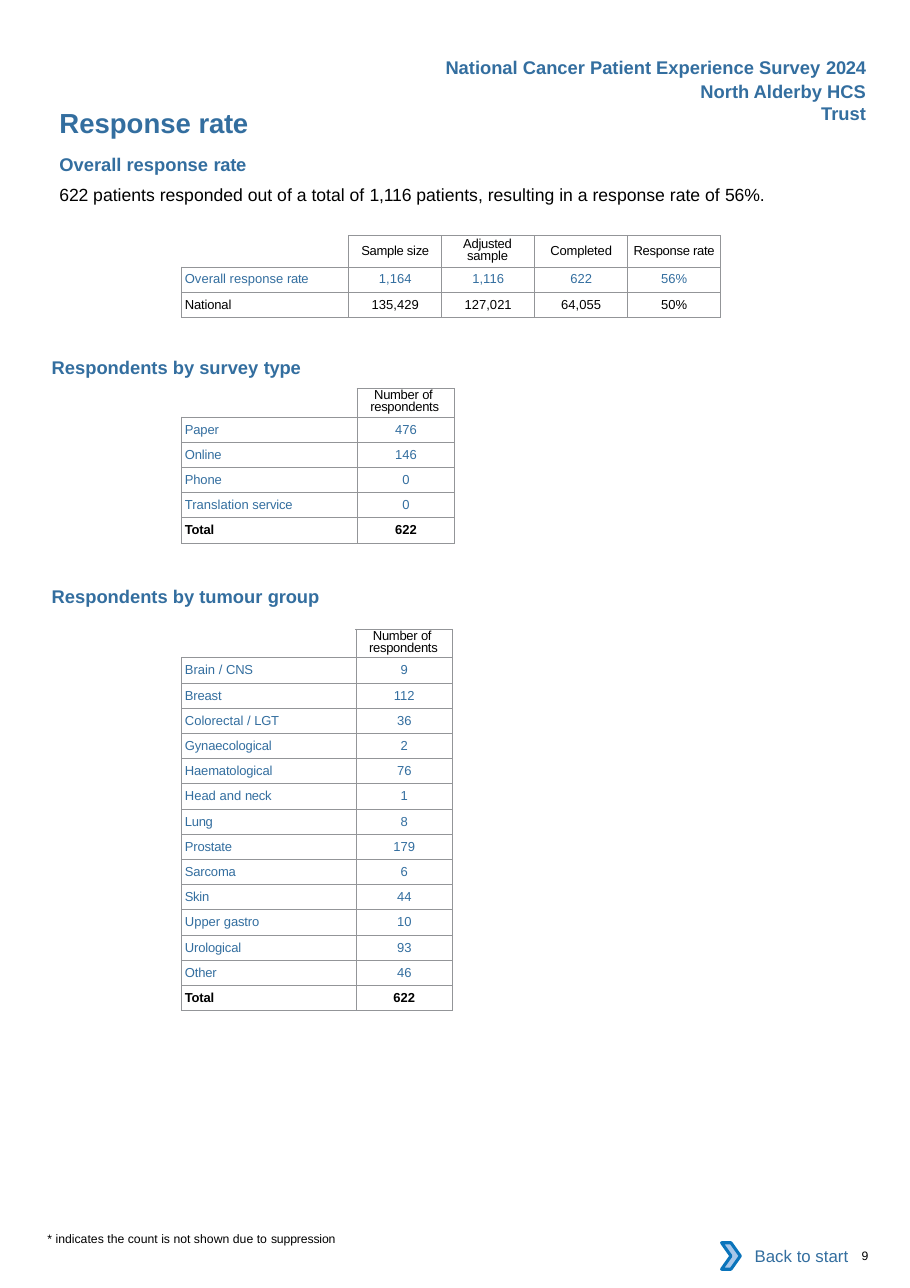
from dataclasses import dataclass

from lxml.etree import SubElement
from pptx import Presentation
from pptx.dml.color import RGBColor
from pptx.enum.shapes import MSO_SHAPE
from pptx.enum.text import MSO_ANCHOR, PP_ALIGN
from pptx.oxml.ns import qn
from pptx.util import Inches, Pt

PX_PER_INCH = 1000


@dataclass(frozen=True)
class Theme:
    font: str = "Arial"
    blue: str = "336E9F"
    black: str = "000000"
    white: str = "FFFFFF"
    grid: str = "939598"
    chevron: str = "A8C7E9"
    chevron_line: str = "0A74BB"
    title: float = 18
    heading: float = 12
    body: float = 11.5
    link: float = 11
    table: float = 8.5
    small: float = 8
    header_leading: float = 7.6
    grid_width: float = 0.5


THEME = Theme()
HEADER_HEIGHT = 260
ROW_HEIGHT = 229
TABLE_LEFT = 1646
LABEL_INDENT = 32
COUNT_HEADER = ([("Number ", -0.2), ("of ", -0.3), ("respondents", -0.2)], 120, 35)

SURVEY_TYPES = [
    ([("Paper", -0.1)], "476"),
    ([("Online", -0.1)], "146"),
    ([("Phone", -0.1)], "0"),
    ([("Translation ", 0), ("service", -0.1)], "0"),
    ([("Total", -0.1)], "622"),
]
TUMOUR_GROUPS = [
    ([("Brain / ", 0), ("CNS", -0.2)], "9"),
    ([("Breast", -0.1)], "112"),
    ([("Colorectal / ", 0), ("LGT", -0.2)], "36"),
    ([("Gynaecological", -0.1)], "2"),
    ([("Haematological", -0.1)], "76"),
    ([("Head and ", 0), ("neck", -0.2)], "1"),
    ([("Lung", -0.2)], "8"),
    ([("Prostate", -0.1)], "179"),
    ([("Sarcoma", -0.1)], "6"),
    ([("Skin", -0.2)], "44"),
    ([("Upper ", 0), ("gastro", -0.1)], "10"),
    ([("Urological", -0.1)], "93"),
    ([("Other", -0.1)], "46"),
    ([("Total", -0.1)], "622"),
]


def px(length):
    return round(length * Inches(1) / PX_PER_INCH)


def rgb(colour):
    return RGBColor.from_string(colour)


def add_spans(para, spans, size, colour, bold=False):
    """Add (text, letter spacing in points) pairs as runs."""
    for text, spacing in spans:
        span = para.add_run()
        span.text = text
        span.font.name = THEME.font
        span.font.size = Pt(size)
        span.font.bold = bold
        span.font.color.rgb = rgb(colour)
        if spacing:
            span._r.get_or_add_rPr().set("spc", str(round(spacing * 100)))


def indent(para, left, first=0):
    properties = para._p.get_or_add_pPr()
    properties.set("marL", str(px(left)))
    properties.set("indent", str(px(first)))


def add_text(page, place, spans, size, colour, bold=False, left=10):
    box = page.shapes.add_textbox(*map(px, place))
    frame = box.text_frame
    frame.word_wrap = True
    frame.margin_left = frame.margin_right = frame.margin_top = frame.margin_bottom = 0
    para = frame.paragraphs[0]
    indent(para, left)
    add_spans(para, spans, size, colour, bold)


def add_heading(page, place, spans, size=THEME.heading):
    add_text(page, place, spans, size, THEME.blue, bold=True)


def add_banner(page, place, spans):
    frame = page.shapes.add_textbox(*map(px, place)).text_frame
    frame.word_wrap = False
    para = frame.paragraphs[0]
    para.alignment = PP_ALIGN.RIGHT
    add_spans(para, spans, THEME.heading, THEME.blue, bold=True)


def style_cell(cell, sides="LRTB"):
    """Clear the fill and insets, and draw grid lines on the given sides."""
    cell.margin_left = cell.margin_right = cell.margin_top = cell.margin_bottom = 0
    cell.vertical_anchor = MSO_ANCHOR.MIDDLE
    properties = cell._tc.get_or_add_tcPr()
    for side in "LRTB":
        line = SubElement(properties, qn(f"a:ln{side}"), w=str(Pt(THEME.grid_width)))
        if side in sides:
            fill = SubElement(line, qn("a:solidFill"))
            SubElement(fill, qn("a:srgbClr"), val=THEME.grid)
        else:
            SubElement(line, qn("a:noFill"))
    cell.fill.background()


def fill_header(cell, spans, left=None, first=0):
    """Centre a one-line header, or indent one that wraps."""
    style_cell(cell)
    para = cell.text_frame.paragraphs[0]
    if left is None:
        para.alignment = PP_ALIGN.CENTER
    else:
        indent(para, left, first)
        para.line_spacing = Pt(THEME.header_leading)
    add_spans(para, spans, THEME.table, THEME.black)


def fill_row(cells, label, values, colour, bold):
    for cell, spans in zip(cells, [label] + [[(value, 0)] for value in values]):
        style_cell(cell)
        para = cell.text_frame.paragraphs[0]
        if spans is label:
            indent(para, LABEL_INDENT)
        else:
            para.alignment = PP_ALIGN.CENTER
        add_spans(para, spans, THEME.table, colour, bold)


def add_grid(page, top, widths, headers, rows, header_height=HEADER_HEIGHT, bold_last=True):
    """Add a table whose last row is black and whose top left cell is open."""
    heights = [header_height] + [ROW_HEIGHT] * len(rows)
    place = (TABLE_LEFT, top, sum(widths), sum(heights))
    table = page.shapes.add_table(len(heights), len(widths), *map(px, place)).table
    table.first_row = table.horz_banding = False
    for column, width in zip(table.columns, widths):
        column.width = px(width)
    for row, height in zip(table.rows, heights):
        row.height = px(height)

    corner = table.cell(0, 0)
    style_cell(corner, "RB")
    SubElement(corner.text_frame.paragraphs[0]._p, qn("a:endParaRPr"),
               sz=str(round(THEME.table * 100)))
    for column, header in enumerate(headers, 1):
        fill_header(table.cell(0, column), *header)
    for number, (label, *values) in enumerate(rows, 1):
        last = number == len(rows)
        cells = [table.cell(number, column) for column in range(len(widths))]
        fill_row(cells, label, values, THEME.black if last else THEME.blue, last and bold_last)


def add_panel(group, kind, place, fill):
    shape = group.shapes.add_shape(kind, *map(px, place))
    shape.shadow.inherit = False
    shape.fill.solid()
    shape.fill.fore_color.rgb = rgb(fill)
    shape.line.fill.background()
    return shape


def add_start_button(page):
    group = page.shapes.add_group_shape()
    button = add_panel(group, MSO_SHAPE.RECTANGLE, (6620, 11190, 1180, 420), THEME.white)
    button.text_frame.vertical_anchor = MSO_ANCHOR.MIDDLE
    para = button.text_frame.paragraphs[0]
    para.alignment = PP_ALIGN.RIGHT
    add_spans(para, [("Back to start", 0)], THEME.link, THEME.blue)
    chevron = add_panel(group, MSO_SHAPE.CHEVRON, (6550, 11280, 170, 240), THEME.chevron)
    chevron.line.color.rgb = rgb(THEME.chevron_line)
    chevron.line.width = Pt(2)


def main():
    deck = Presentation()
    deck.slide_width, deck.slide_height = px(8260), px(11690)
    page = deck.slides.add_slide(deck.slide_layouts[6])

    add_banner(page, (3920, 460, 4040, 300),
               [("National Cancer Patient Experience Survey ", 0), ("2024", -0.2)])
    add_banner(page, (5860, 680, 2100, 300), [("North Alderby HCS Trust", 0)])
    add_heading(page, (530, 960, 4130, 300), [("Response ", 0), ("rate", -0.2)], THEME.title)
    add_heading(page, (530, 1390, 4130, 200), [("Overall response ", 0), ("rate", -0.2)])
    add_text(page, (530, 1670, 7200, 190),
             [("622 ", -0.1), ("patients responded out of a total of ", 0), ("1,116 ", -0.1),
              ("patients, resulting in a response rate of ", 0), ("56", -0.1), ("%.", -0.2)],
             THEME.body, THEME.black)
    add_grid(page, 2140, [1520] + [844] * 4,
             [([("Sample size", -0.2)],),
              ([("Adjusted", -0.2), (" sample", -0.1)], 230, -35),
              ([("Completed", -0.1)],),
              ([("Response rate", -0.2)],)],
             [([("Overall response ", 0), ("rate", -0.2)], "1,164", "1,116", "622", "56%"),
              ([("National", -0.1)], "135,429", "127,021", "64,055", "50%")],
             header_height=282, bold_last=False)

    add_heading(page, (460, 3230, 2300, 200), [("Respondents by survey ", 0), ("type", -0.2)])
    add_grid(page, 3525, [1595, 887], [COUNT_HEADER], SURVEY_TYPES)
    add_heading(page, (460, 5310, 2460, 200), [("Respondents by tumour ", 0), ("group", -0.1)])
    add_grid(page, 5710, [1584, 880], [COUNT_HEADER], TUMOUR_GROUPS)

    add_text(page, (420, 11180, 2650, 130),
             [("* indicates the count is not shown due to ", 0), ("suppression", -0.1)],
             THEME.small, THEME.black)
    add_start_button(page)
    add_text(page, (7720, 11330, 510, 130), [("9", -0.2)], THEME.small, THEME.black, left=100)
    deck.save("out.pptx")


if __name__ == "__main__":
    main()
